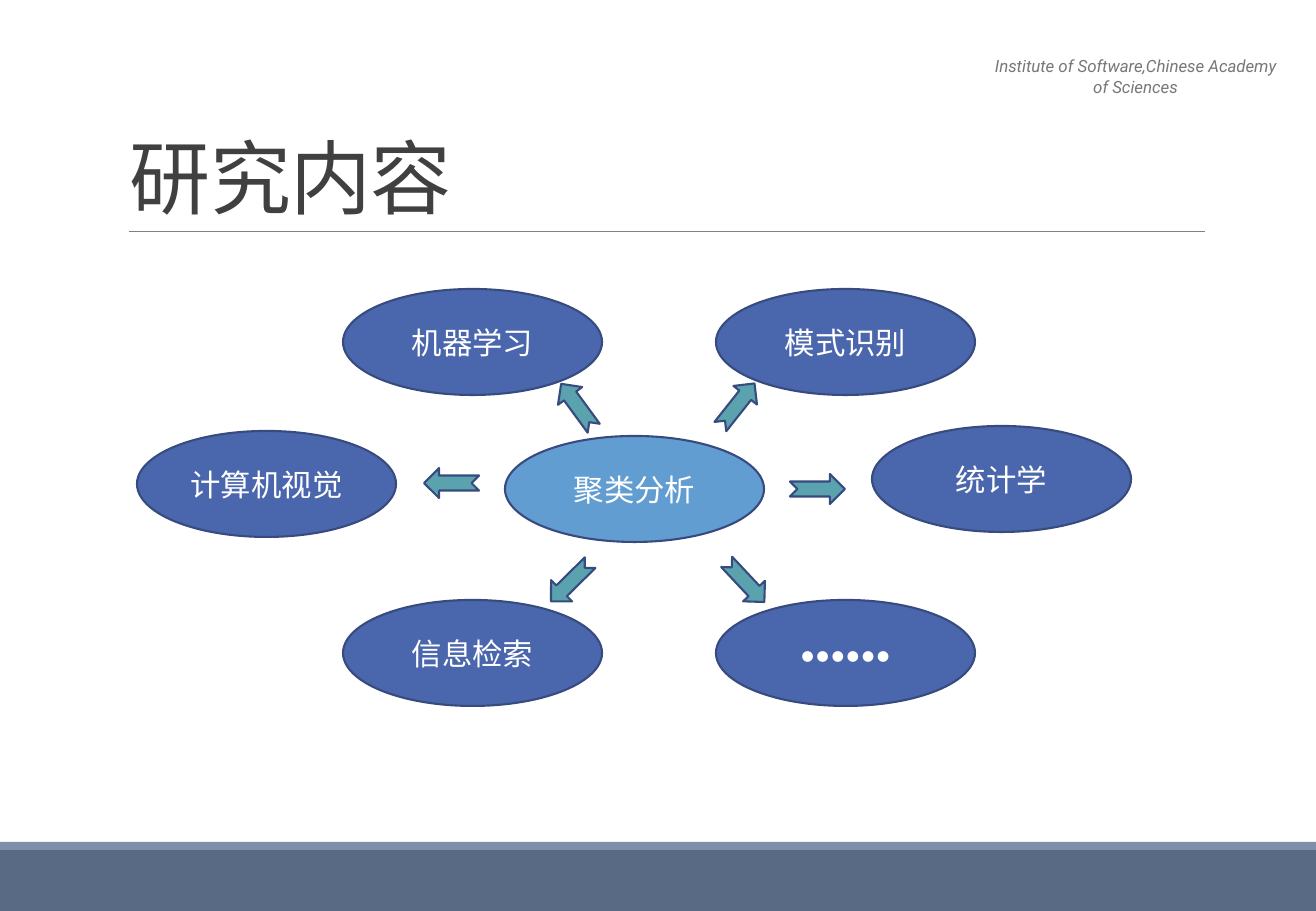
from lxml.etree import SubElement
from pptx import Presentation
from pptx.dml.color import RGBColor
from pptx.enum.shapes import MSO_CONNECTOR, MSO_SHAPE
from pptx.enum.text import MSO_ANCHOR, PP_ALIGN
from pptx.oxml.ns import qn
from pptx.util import Pt

EMU = 7526  # one px at 121.5 px to the inch
WIDE, HIGH = 1316, 911

SLATE = RGBColor(0x59, 0x6A, 0x85)
MIST = RGBColor(0x7F, 0x8F, 0xA9)
GRAY = RGBColor(0x80, 0x80, 0x80)
SOFT = RGBColor(0x77, 0x77, 0x77)
DARK = RGBColor(0x40, 0x40, 0x40)
WHITE = RGBColor(0xFF, 0xFF, 0xFF)
SKY = RGBColor(0x62, 0x9D, 0xD1)
BLUE = RGBColor(0x4A, 0x66, 0xAC)
NAVY = RGBColor(0x37, 0x4B, 0x7F)
TEAL = RGBColor(0x5A, 0xA2, 0xAE)

LEFT, RIGHT = 343, 716
UPPER, LOWER = 289, 600
TOPICS = [
    ("机器学习", LEFT, UPPER),
    ("计算机视觉", 137, 431),
    ("模式识别", RIGHT, UPPER),
    ("统计学", 872, 426),
    ("信息检索", LEFT, LOWER),
    ("••••••", RIGHT, LOWER),
]
ARROWS = [
    (550, 391, 233.8),
    (543, 567, 135.4),
    (710, 390, 308.4),
    (790, 474, 0),
    (424, 468, 180),
    (718, 567, 46.8),
]


class Board:
    font = "Calibri"
    edge = Pt(1.25)

    def __init__(self, deck):
        self.slide = deck.slides.add_slide(deck.slide_layouts[6])
        self.shapes = self.slide.shapes

    def label(self, frame, text, size, color, align=PP_ALIGN.CENTER, font=None):
        frame.word_wrap = True
        para = frame.paragraphs[0]
        para.alignment = align
        run = para.add_run()
        run.text = text
        run.font.size = Pt(size)
        run.font.name = font or self.font
        run.font.color.rgb = color
        return para, run

    def shape(self, kind, x, y, w, h, fill, line=None):
        item = self.shapes.add_shape(kind, x * EMU, y * EMU, w * EMU, h * EMU)
        item.shadow.inherit = False
        item.fill.solid()
        item.fill.fore_color.rgb = fill
        if line is None:
            item.line.fill.background()
        else:
            item.line.color.rgb = line
            item.line.width = self.edge
        return item

    def bar(self, y, h, fill):
        self.shape(MSO_SHAPE.RECTANGLE, 0, y, WIDE, h, fill)

    def rule(self, x, y, end):
        line = self.shapes.add_connector(
            MSO_CONNECTOR.STRAIGHT, x * EMU, y * EMU, end * EMU, y * EMU)
        line.line.color.rgb = GRAY
        line.line.width = Pt(0.5)
        SubElement(line._element.spPr, qn("a:effectLst"))

    def box(self, x, y, w, h):
        return self.shapes.add_textbox(x * EMU, y * EMU, w * EMU, h * EMU).text_frame

    def header(self, text):
        frame = self.box(977, 50, 317, 33)
        _, run = self.label(frame, text, 10, SOFT, font="Roboto")
        run.font.italic = True

    def title(self, text):
        frame = self.box(118, 38, 1086, 193)
        frame.vertical_anchor = MSO_ANCHOR.BOTTOM
        para, run = self.label(frame, text, 48, DARK, PP_ALIGN.LEFT)
        para.line_spacing = 0.85
        run.font._element.set("spc", "-50")

    def topic(self, text, x, y, fill=BLUE):
        oval = self.shape(MSO_SHAPE.OVAL, x, y, 259, 106, fill, NAVY)
        oval.text_frame.vertical_anchor = MSO_ANCHOR.MIDDLE
        self.label(oval.text_frame, text, 18, WHITE)

    def arrow(self, x, y, turn):
        item = self.shape(MSO_SHAPE.NOTCHED_RIGHT_ARROW, x, y, 55, 30, TEAL, NAVY)
        item.rotation = turn


def main():
    deck = Presentation()
    deck.slide_width, deck.slide_height = WIDE * EMU, HIGH * EMU
    board = Board(deck)
    board.bar(850, 61, SLATE)
    board.bar(842, 8, MIST)
    board.rule(129, 231, 1205)
    board.header("Institute of Software,Chinese Academy of Sciences")
    board.title("研究内容")
    board.topic("聚类分析", 505, 436, SKY)
    for topic in TOPICS:
        board.topic(*topic)
    for arrow in ARROWS:
        board.arrow(*arrow)
    deck.save("out.pptx")


if __name__ == "__main__":
    main()
